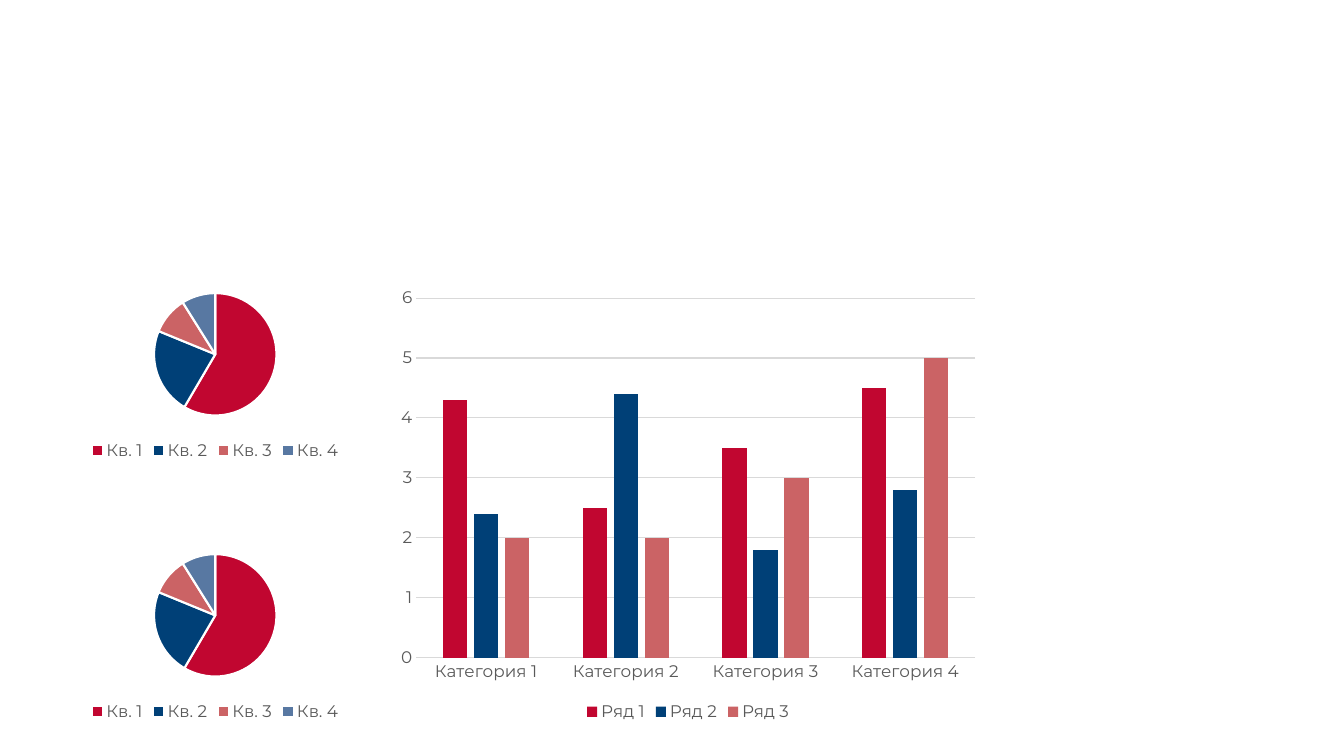
"""Build a slide with two pie charts and a clustered column chart."""
import pptx
import pptx.chart.data
import pptx.dml.color
import pptx.enum.chart
import pptx.util

Inches = pptx.util.Inches
Pt = pptx.util.Pt
Color = pptx.dml.color.RGBColor
Kind = pptx.enum.chart.XL_CHART_TYPE
Tick = pptx.enum.chart.XL_TICK_MARK

RED = Color(0xC1, 0x06, 0x30)
NAVY = Color(0x00, 0x40, 0x77)
ROSE = Color(0xCB, 0x63, 0x65)
BLUE = Color(0x58, 0x78, 0xA2)
GRAY = Color(0x59, 0x59, 0x59)
PALE = Color(0xD9, 0xD9, 0xD9)
WHITE = Color(0xFF, 0xFF, 0xFF)
HUES = [RED, NAVY, ROSE, BLUE]


def style(font):
    font.name = "Montserrat"
    font.size = Pt(12)
    font.color.rgb = GRAY


def add_chart(kind, box, names, rows):
    data = pptx.chart.data.CategoryChartData()
    data.categories = names
    for name, vals in rows:
        data.add_series(name, vals)
    frame = slide.shapes.add_chart(kind, *map(Inches, box), data)
    chart = frame.chart
    chart.has_title = False
    style(chart.font)
    chart.has_legend = True
    chart.legend.position = pptx.enum.chart.XL_LEGEND_POSITION.BOTTOM
    chart.legend.include_in_layout = False
    style(chart.legend.font)
    return chart


deck = pptx.Presentation()
deck.slide_width = Inches(13.33)
deck.slide_height = Inches(7.5)
slide = deck.slides.add_slide(deck.slide_layouts[6])

terms = [f"Кв. {n}" for n in range(1, 5)]
for top in (2.77, 5.36):
    pie = add_chart(Kind.PIE, (0.65, top, 2.97, 1.84), terms,
                    [("Series 1", (59, 23, 10, 9))])
    pie.plots[0].vary_by_categories = True
    for i, hue in enumerate(HUES):
        slice_form = pie.plots[0].series[0].points[i].format
        slice_form.fill.solid()
        slice_form.fill.fore_color.rgb = hue
        slice_form.line.color.rgb = WHITE
        slice_form.line.width = Pt(1.5)

groups = [f"Категория {n}" for n in range(1, 5)]
rows = [
    ("Ряд 1", (4.3, 2.5, 3.5, 4.5)),
    ("Ряд 2", (2.4, 4.4, 1.8, 2.8)),
    ("Ряд 3", (2, 2, 3, 5)),
]
bars = add_chart(Kind.COLUMN_CLUSTERED, (3.86, 2.77, 5.93, 4.43), groups, rows)
plot = bars.plots[0]
plot.vary_by_categories = False
plot.gap_width = 219
plot.overlap = -27
for series, hue in zip(plot.series, HUES):
    series.format.fill.solid()
    series.format.fill.fore_color.rgb = hue

for axis in (bars.category_axis, bars.value_axis):
    axis.major_tick_mark = Tick.NONE
    axis.minor_tick_mark = Tick.NONE
    style(axis.tick_labels.font)

bars.value_axis.minimum_scale = 0
bars.value_axis.maximum_scale = 6
bars.value_axis.major_unit = 1
bars.value_axis.has_major_gridlines = True
bars.value_axis.format.line.fill.background()
for rule in (bars.category_axis, bars.value_axis.major_gridlines):
    rule.format.line.color.rgb = PALE
    rule.format.line.width = Pt(0.75)

deck.save("out.pptx")
